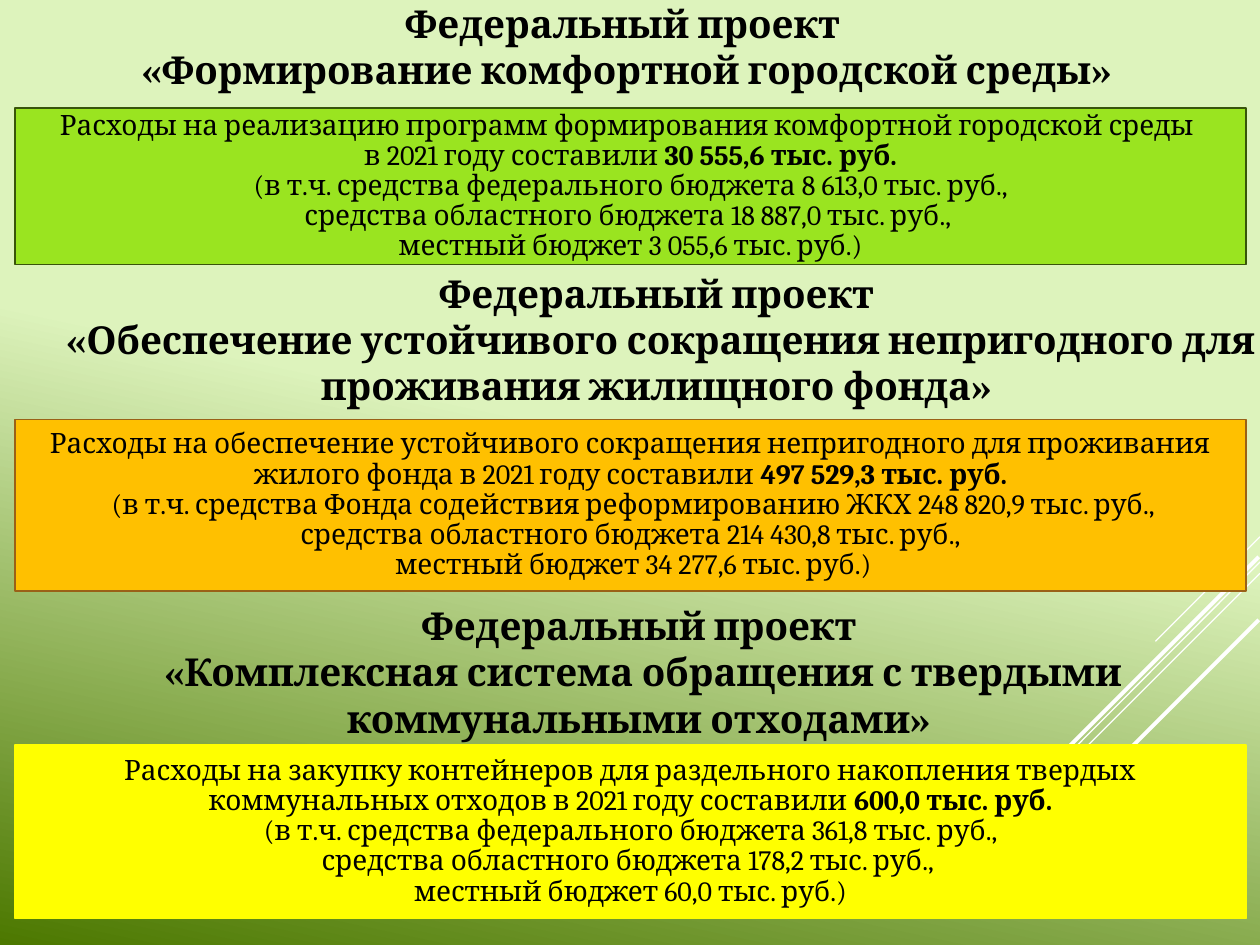
from dataclasses import dataclass

from lxml.etree import SubElement
from pptx import Presentation
from pptx.dml.color import RGBColor as RGB
from pptx.enum.shapes import MSO_CONNECTOR as CONN, MSO_SHAPE as SHAPE
from pptx.enum.text import MSO_ANCHOR as ANCHOR, MSO_AUTO_SIZE as AUTO, PP_ALIGN as ALIGN
from pptx.oxml.ns import qn
from pptx.util import Inches, Pt


@dataclass(frozen=True)
class Theme:
    font: str = "Cambria"
    heading: int = 22
    body: int = 16
    text: str = "000000"
    ray: str = "FFFFFF"
    bg_light: str = "DDF3BC"
    bg_dark: str = "4C7800"


T = Theme()
PANEL_LEFT, PANEL_WIDTH = 0.12, 9.77

RAYS = [
    ((10, 4.26), (9.17, 5.09), 0.75),
    ((10, 4.46), (7.3, 7.17), 0.75),
    ((10, 4.55), (8.28, 6.27), 0.75),
    ((9.99, 4.42), (8.42, 5.99), 2.25),
    ((9.99, 4.92), (8.85, 6.06), 2.25),
]

PROJECTS = [
    dict(
        name=" «Формирование комфортной городской среды»",
        heading_at=(0, -0.05, 9.88, 0.84),
        top=0.86, height=1.24, fill="9AE420", line="38540A",
        text=[
            [("Расходы на реализацию программ формирования комфортной городской среды ", False)],
            [("в 2021 году составили ", False), ("30 555,6 тыс. руб.", True)],
            [(" (в т.ч. средства федерального бюджета 8 613,0 тыс. руб., ", False)],
            [("средства областного бюджета 18 887,0 тыс. руб., ", False)],
            [("местный бюджет 3 055,6 тыс. руб.)", False)],
        ],
    ),
    dict(
        name=" «Обеспечение устойчивого сокращения непригодного для проживания жилищного фонда»",
        heading_at=(0.28, 2.09, 9.86, 1.21),
        top=3.33, height=1.36, fill="FFC000", line="9A6117",
        text=[
            [("Расходы на обеспечение устойчивого сокращения непригодного для проживания "
              "жилого фонда в 2021 году составили ", False), ("497 529,3 тыс. руб.", True)],
            [(" (в т.ч. средства Фонда содействия реформированию ЖКХ 248 820,9 тыс. руб.,", False)],
            [("средства областного бюджета 214 430,8 тыс. руб.,", False)],
            [(" местный бюджет 34 277,6 тыс. руб.)", False)],
        ],
    ),
    dict(
        name=" «Комплексная система обращения с твердыми коммунальными отходами»",
        heading_at=(0.14, 4.73, 9.86, 1.21),
        top=5.91, height=1.38, fill="FFFF00", line="FFFF00",
        text=[
            [("Расходы на закупку контейнеров для раздельного накопления твердых "
              "коммунальных отходов в 2021 году составили ", False), ("600,0 тыс. руб.", True)],
            [(" (в т.ч. средства федерального бюджета 361,8 тыс. руб., ", False)],
            [("средства областного бюджета 178,2 тыс. руб., ", False)],
            [("местный бюджет 60,0 тыс. руб.)", False)],
        ],
    ),
]


def color(value):
    return RGB.from_string(value)


def add_run(p, text, size, bold):
    r = p.add_run()
    r.text = text
    r.font.name = T.font
    r.font.size = Pt(size)
    r.font.bold = bold
    r.font.color.rgb = color(T.text)


def paint_background(s):
    fill = s.background.fill
    fill.gradient()
    fill.gradient_angle = 258
    for stop, position, value in zip(fill.gradient_stops, (0.47, 1), (T.bg_light, T.bg_dark)):
        stop.position = position
        stop.color.rgb = color(value)


def add_ray(s, start, end, width):
    ray = s.shapes.add_connector(CONN.STRAIGHT, *map(Inches, start + end))
    ray.line.color.rgb = color(T.ray)
    ray.line.width = Pt(width)
    SubElement(ray._element.spPr, qn("a:effectLst"))


def fill_heading(sp, project):
    sp.left, sp.top, sp.width, sp.height = map(Inches, project["heading_at"])
    tf = sp.text_frame
    tf.word_wrap = True
    tf.auto_size = AUTO.SHAPE_TO_FIT_TEXT
    tf.vertical_anchor = ANCHOR.TOP
    p = tf.paragraphs[0]
    p.alignment = ALIGN.CENTER
    p.line_spacing = 1.0
    add_run(p, "Федеральный проект", T.heading, True)
    p.add_line_break()
    add_run(p, project["name"], T.heading, True)


def add_panel(s, project):
    box = (PANEL_LEFT, project["top"], PANEL_WIDTH, project["height"])
    sp = s.shapes.add_shape(SHAPE.RECTANGLE, *map(Inches, box))
    sp.shadow.inherit = False
    sp.fill.solid()
    sp.fill.fore_color.rgb = color(project["fill"])
    sp.line.color.rgb = color(project["line"])
    sp.line.width = Pt(1)
    tf = sp.text_frame
    tf.word_wrap = True
    tf.vertical_anchor = ANCHOR.MIDDLE
    for i, runs in enumerate(project["text"]):
        p = tf.add_paragraph() if i else tf.paragraphs[0]
        p.alignment = ALIGN.CENTER
        p.line_spacing = 0.9
        for text, bold in runs:
            add_run(p, text, T.body, bold)


def main():
    prs = Presentation()
    prs.slide_width, prs.slide_height = Inches(10), Inches(7.5)
    s = prs.slides.add_slide(prs.slide_layouts[5])
    paint_background(s)
    for ray in RAYS:
        add_ray(s, *ray)
    for i, project in enumerate(PROJECTS):
        box = map(Inches, project["heading_at"])
        fill_heading(s.shapes.add_textbox(*box) if i else s.shapes.title, project)
        add_panel(s, project)
    prs.save("out.pptx")


if __name__ == "__main__":
    main()
